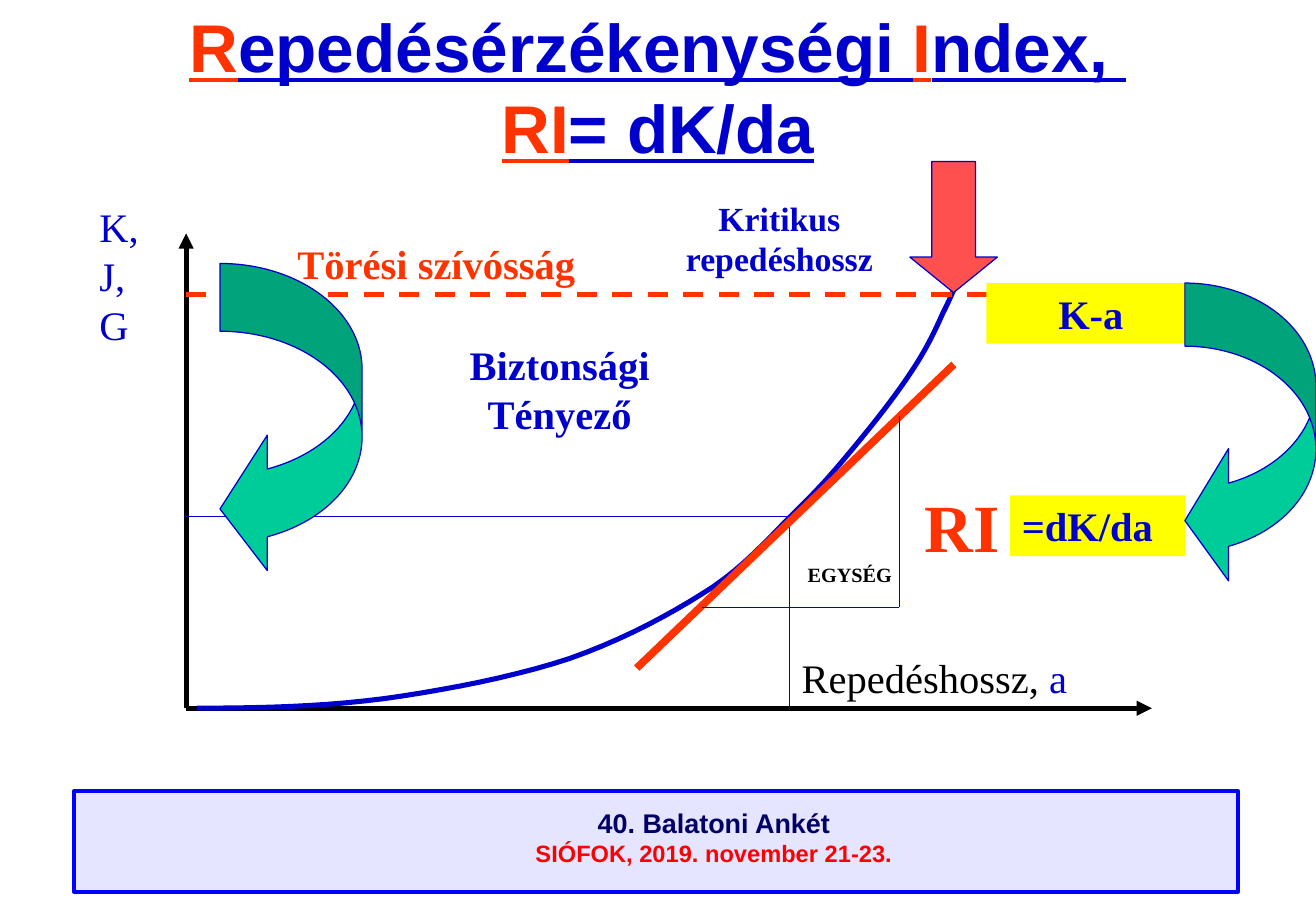
import pptx
import pptx.util
import pptx.dml.color
import pptx.enum.dml
import pptx.enum.shapes
import pptx.enum.text
import pptx.oxml.ns
import lxml.etree

Cm, Pt = pptx.util.Cm, pptx.util.Pt
RGBColor = pptx.dml.color.RGBColor
SHAPE = pptx.enum.shapes.MSO_SHAPE
ALIGN = pptx.enum.text.PP_ALIGN
qn = pptx.oxml.ns.qn

BLUE = RGBColor(0x00, 0x00, 0xCC)
ORANGE = RGBColor(0xFF, 0x33, 0x00)
BLACK = RGBColor(0x00, 0x00, 0x00)
NAVY = RGBColor(0x00, 0x00, 0x66)
RED = RGBColor(0xFF, 0x00, 0x00)
FRAME_BLUE = RGBColor(0x00, 0x00, 0xFF)
LAVENDER = RGBColor(0xCC, 0xCC, 0xFF)
GREEN = RGBColor(0x00, 0xCC, 0x99)
YELLOW = RGBColor(0xFF, 0xFF, 0x00)
CORAL = RGBColor(0xFF, 0x50, 0x50)
SERIF, SANS = "Times New Roman", "Arial"

prs = pptx.Presentation()
prs.slide_width, prs.slide_height = Cm(27.51), Cm(19.05)
s = prs.slides.add_slide(prs.slide_layouts[6])


def write(sp, paragraphs, font=SERIF, bold=True, underline=None, align=ALIGN.CENTER):
    """Fill a shape with paragraphs, each a list of (text, size, colour) runs."""
    tf = sp.text_frame
    tf.word_wrap = True
    tf.vertical_anchor = pptx.enum.text.MSO_ANCHOR.TOP
    for i, runs in enumerate(paragraphs):
        p = tf.add_paragraph() if i else tf.paragraphs[0]
        p.alignment = align
        for text, size, color in runs:
            if text == "\v":
                p.add_line_break()
                continue
            r = p.add_run()
            r.text = text
            r.font.name, r.font.size = font, Pt(size)
            r.font.bold, r.font.underline = bold, underline
            r.font.color.rgb = color
    return tf


def add_line(x1, y1, x2, y2, color=BLUE, width=0.75):
    c = s.shapes.add_connector(pptx.enum.shapes.MSO_CONNECTOR.STRAIGHT,
                               Cm(x1), Cm(y1), Cm(x2), Cm(y2))
    c.line.color.rgb, c.line.width = color, Pt(width)
    lxml.etree.SubElement(c.element.spPr, qn("a:effectLst"))
    return c


# Footer banner
banner = s.shapes.add_shape(SHAPE.RECTANGLE, Cm(1.55), Cm(16.54), Cm(24.33), Cm(2.11))
banner.shadow.inherit = False
banner.fill.solid()
banner.fill.fore_color.rgb = LAVENDER
tint = banner.element.spPr.find(qn("a:solidFill"))[0]
lxml.etree.SubElement(tint, qn("a:alpha")).set("val", "50000")
banner.line.color.rgb, banner.line.width = FRAME_BLUE, Pt(2.25)

footer = s.shapes.add_textbox(Cm(4.55), Cm(16.74), Cm(20.75), Cm(1.55))
write(footer, [[("40. Balatoni Ankét", 16, NAVY)],
               [("SIÓFOK, 2019. november 21-23.", 14, RED)]], font=SANS)

# Title
title = s.shapes.add_textbox(0, 0, prs.slide_width, Cm(3.61))
tf = write(title, [[("R", 40, ORANGE), ("epedésérzékenységi ", 40, BLUE),
                    ("I", 40, ORANGE), ("ndex, ", 40, BLUE), ("\v", 40, BLUE),
                    ("RI", 40, ORANGE), ("= dK/da", 40, BLUE)]],
           font=SANS, underline=True)
tf.vertical_anchor = pptx.enum.text.MSO_ANCHOR.MIDDLE

# Axes
X0, Y0 = 3.89, 14.81
for x, y in [(24.08, Y0), (X0, 4.88)]:
    axis = add_line(X0, Y0, x, y, BLACK, 3)
    lxml.etree.SubElement(axis.line._get_or_add_ln(), qn("a:tailEnd")).set("type", "triangle")

# Crack curve: cubic segments, each as two control points and an end point
start = (4.11, Y0)
segments = [
    ((5.44, 14.81), (6.73, 14.78), (8.03, 14.61)),
    ((9.32, 14.43), (10.77, 14.15), (11.91, 13.77)),
    ((13.08, 13.36), (14.1, 12.8), (14.91, 12.27)),
    ((15.7, 11.73), (16.23, 11.07), (16.74, 10.59)),
    ((17.25, 10.08), (17.5, 9.78), (17.88, 9.32)),
    ((18.26, 8.86), (18.72, 8.28), (19.02, 7.82)),
    ((19.33, 7.37), (19.53, 6.96), (19.71, 6.55)),
    ((19.91, 6.17), (20.09, 5.69), (20.17, 5.51)),
]
STEPS = 10
points, a = [], start
for b, c, d in segments:
    for k in range(1, STEPS + 1):
        t = k / STEPS
        u = 1 - t
        points.append(tuple(
            Cm(u**3 * a[i] + 3 * u * u * t * b[i] + 3 * u * t * t * c[i] + t**3 * d[i])
            for i in (0, 1)))
    a = d
builder = s.shapes.build_freeform(Cm(start[0]), Cm(start[1]))
builder.add_line_segments(points, close=False)
curve = builder.convert_to_shape()
curve.shadow.inherit = False
curve.fill.background()
curve.line.color.rgb, curve.line.width = BLUE, Pt(3)

# Toughness limit, working point, tangent and unit triangle
limit = add_line(X0, 6.15, 22.94, 6.15, ORANGE, 3)
limit.line.dash_style = pptx.enum.dml.MSO_LINE.DASH
add_line(16.51, Y0, 16.51, 10.8)
add_line(16.51, 10.8, X0, 10.8)
add_line(13.31, 13.97, 19.94, 7.62, ORANGE, 4.5)
add_line(14.68, 12.7, 18.8, 12.7)
add_line(18.8, 12.7, 18.8, 8.69)

# Yellow formula boxes
for x, y, w, text, align in [(20.62, 5.92, 4.37, "K-a", ALIGN.CENTER),
                             (21.11, 10.36, 3.66, "=dK/da", ALIGN.LEFT)]:
    sp = s.shapes.add_shape(SHAPE.RECTANGLE, Cm(x), Cm(y), Cm(w), Cm(1.27))
    sp.shadow.inherit = False
    sp.fill.solid()
    sp.fill.fore_color.rgb = YELLOW
    sp.line.fill.background()
    write(sp, [[(text, 24, BLUE)]], align=align)

# Block arrows
for kind, x, y, w, h, color, adjustments in [
        (SHAPE.CURVED_LEFT_ARROW, 4.6, 5.51, 2.97, 6.55, GREEN, (0.477, 0.954, 0.333)),
        (SHAPE.CURVED_LEFT_ARROW, 24.77, 5.92, 2.74, 6.35, GREEN, (0.482, 1.009, 0.333)),
        (SHAPE.DOWN_ARROW, 19.02, 3.38, 1.83, 2.74, CORAL, (0.5, 0.406))]:
    sp = s.shapes.add_shape(kind, Cm(x), Cm(y), Cm(w), Cm(h))
    sp.shadow.inherit = False
    for i, value in enumerate(adjustments):
        sp.adjustments[i] = value
    sp.fill.solid()
    sp.fill.fore_color.rgb = color
    sp.line.color.rgb, sp.line.width = BLUE, Pt(0.75)

# Labels
for x, y, w, h, runs, bold, align in [
        (16.51, 13.54, 6.65, 1.27, [("Repedéshossz,", 24, BLACK), (" a", 24, BLUE)],
         False, ALIGN.LEFT),
        (5.97, 4.88, 11, 1.27, [("Törési szívósság", 24, ORANGE)], True, ALIGN.LEFT),
        (19.08, 10.01, 4.32, 1.96, [("RI", 40, ORANGE)], True, ALIGN.LEFT),
        (8.26, 6.99, 6.88, 2.31, [("Biztonsági Tényező", 24, BLUE)], True, ALIGN.CENTER),
        (15.82, 11.63, 3.89, 0.76, [("EGYSÉG", 12, BLACK)], True, ALIGN.CENTER),
        (13.54, 4.01, 5.51, 1.96, [("Kritikus repedéshossz", 20, BLUE)], True, ALIGN.CENTER)]:
    write(s.shapes.add_textbox(Cm(x), Cm(y), Cm(w), Cm(h)), [runs], bold=bold, align=align)

quantities = s.shapes.add_textbox(Cm(1.83), Cm(4.45), Cm(1.6), Cm(3.12))
tf = write(quantities, [[(name, 24, BLUE)] for name in ("K,", "J,", "G")],
           bold=False, align=ALIGN.LEFT)
for i, p in enumerate(tf.paragraphs):
    p.line_spacing = 0.6
    if i:
        p.space_before = Pt(12)

prs.save("out.pptx")
